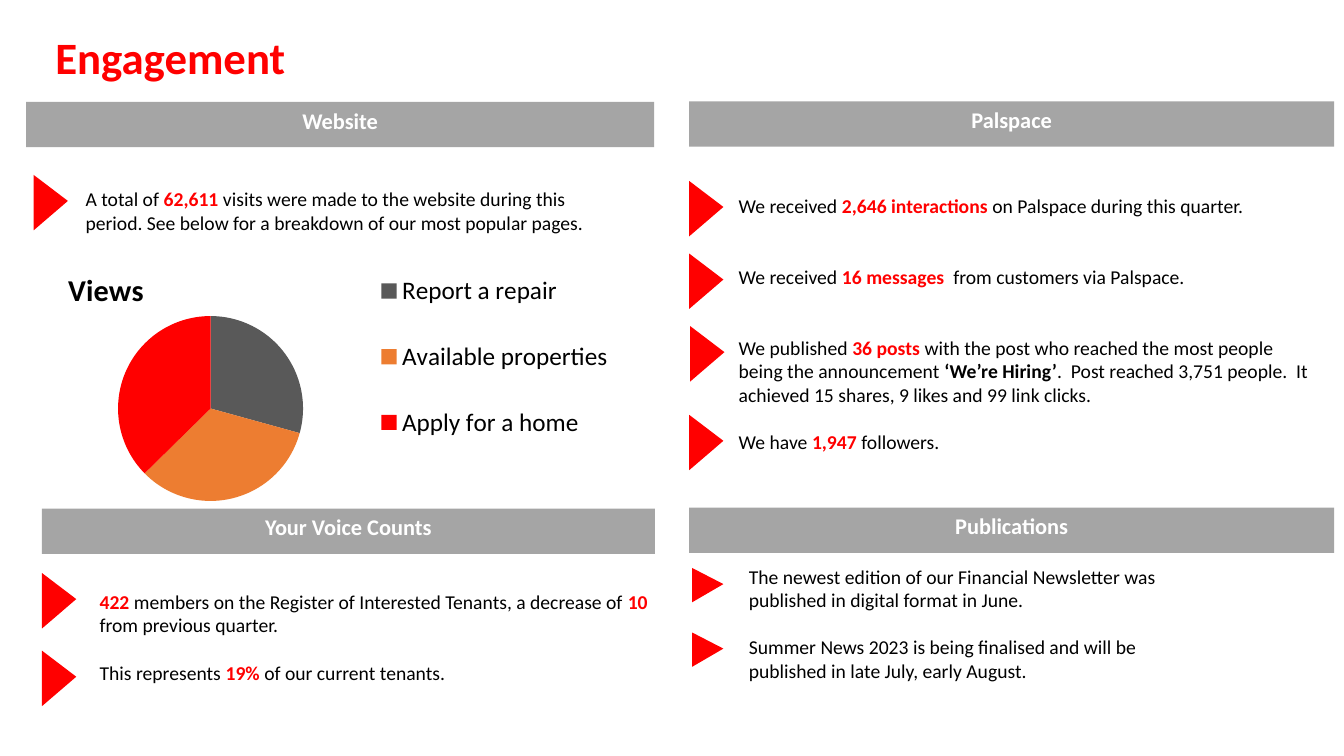
import pptx
import pptx.chart.data
import pptx.dml.color
import pptx.enum.chart
import pptx.enum.shapes
import pptx.enum.text
import pptx.oxml
import pptx.oxml.ns
import pptx.util

COLORS = {"red": "FF0000", "bar": "A5A5A5", "text": "000000", "white": "FFFFFF",
          "repair": "595959", "properties": "ED7D31"}
FONT = "Calibri"
WIDTH, HEIGHT = pptx.util.Inches(13.33), pptx.util.Inches(7.5)
COLUMN, ROW = WIDTH / 40, HEIGHT / 30
BAR_ROWS = 1.8
LARGE_MARKER, SMALL_MARKER = (1.02, 2.2), (0.93, 1.36)
LINE = 17  # points taken by one line of 14 point text

STYLES = {
    "plain": {"size": 14, "color": "text", "bold": False},
    "strong": {"size": 14, "color": "text", "bold": True},
    "key": {"size": 14, "color": "red", "bold": True},
    "heading": {"size": 16, "color": "white", "bold": True},
    "title": {"size": 32, "color": "red", "bold": True},
    "legend": {"size": 18, "color": "text", "bold": False},
    "chart title": {"size": 21.6, "color": "text", "bold": True},
}

# Boxes are (left, top, width, height) in columns and rows; markers and text
# are placed from the top left corner of their region's bar.
REGIONS = [
    {"heading": "Website", "bar": (0.78, 4.04, 18.69, BAR_ROWS),
     "marker": LARGE_MARKER, "markers": [(0.22, 2.9)],
     "text": (1.47, 3.2, 16.38, 3.24),
     "paragraphs": [
         (0, [("A total of ", "plain"), ("62,611", "key"),
              (" visits were made to the website during this period. "
               "See below for a breakdown of our most popular pages.", "plain")])]},
    {"heading": "Palspace", "bar": (20.51, 4.02, 19.2, BAR_ROWS),
     "marker": LARGE_MARKER,
     "markers": [(0, 3.16), (0, 6.04), (0.03, 8.92), (0, 12.44)],
     "text": (1.18, 3.46, 17.91, 10.76),
     "paragraphs": [
         (0, [("We received ", "plain"), ("2,646 interactions ", "key"),
              ("on Palspace during this quarter.", "plain")]),
         (2, [("We received ", "plain"), ("16 messages  ", "key"),
              ("from customers via Palspace.", "plain")]),
         (2, [("We published ", "plain"), ("36 posts ", "key"),
              ("with the post who reached the most people being the announcement ",
               "plain"),
              ("‘We’re Hiring’", "strong"),
              (".  Post reached 3,751 people.  It achieved 15 shares, 9 likes "
               "and 99 link clicks.", "plain")]),
         (1, [("We have ", "plain"), ("1,947", "key"), (" followers.", "plain")])]},
    {"heading": "Your Voice Counts", "bar": (1.25, 20.18, 18.24, BAR_ROWS),
     "marker": LARGE_MARKER, "markers": [(0, 2.56), (0, 5.64)],
     "text": (1.42, 3.02, 17.34, 4.16),
     "paragraphs": [
         (0, [("422", "key"),
              (" members on the Register of Interested Tenants, a decrease of ",
               "plain"),
              ("10 ", "key"), ("from previous quarter.", "plain")]),
         (1, [("This represents ", "plain"), ("19% ", "key"),
              ("of our current tenants.", "plain")])]},
    {"heading": "Publications", "bar": (20.51, 20.14, 19.2, BAR_ROWS),
     "marker": SMALL_MARKER, "markers": [(0.09, 2.4), (0.09, 4.96)],
     "text": (1.48, 2.06, 14.04, 6.04),
     "paragraphs": [
         (0, [("The newest edition of our Financial Newsletter was published "
               "in digital format in June.", "plain")]),
         (1, [("Summer News 2023 is being finalised and will be published in "
               "late July, early August.", "plain")])]},
]
VIEWS = [("Report a repair", 29, "repair"), ("Available properties", 33, "properties"),
         ("Apply for a home", 37, "red")]


def rgb(name):
    return pptx.dml.color.RGBColor.from_string(COLORS[name])


def to_lengths(box):
    left, top, width, height = box
    return [round(value) for value in
            (left * COLUMN, top * ROW, width * COLUMN, height * ROW)]


def style_font(font, style):
    values = STYLES[style]
    formats = {"name": FONT, "size": pptx.util.Pt(values["size"]), "bold": values["bold"]}
    for attribute, value in formats.items():
        setattr(font, attribute, value)
    font.color.rgb = rgb(values["color"])


def add_spans(para, spans):
    for text, style in spans:
        span = para.add_run()
        span.text = text
        style_font(span.font, style)


def add_solid(slide, preset, lengths, color):
    shape = slide.shapes.add_shape(preset, *lengths)
    shape.shadow.inherit = False
    shape.fill.solid()
    shape.fill.fore_color.rgb = rgb(color)
    shape.line.fill.background()
    return shape


def add_text(slide, box, paragraphs):
    """Each paragraph is (lines of space before it, spans)."""
    frame = slide.shapes.add_textbox(*to_lengths(box)).text_frame
    frame.word_wrap = True
    for index, (gap, spans) in enumerate(paragraphs):
        para = frame.add_paragraph() if index else frame.paragraphs[0]
        para.space_before = pptx.util.Pt(gap * LINE)
        add_spans(para, spans)
    return frame


def add_bar(slide, box, heading):
    bar = add_solid(slide, pptx.enum.shapes.MSO_SHAPE.RECTANGLE, to_lengths(box), "bar")
    bar.text_frame.vertical_anchor = pptx.enum.text.MSO_ANCHOR.TOP
    para = bar.text_frame.paragraphs[0]
    para.alignment = pptx.enum.text.PP_ALIGN.CENTER
    add_spans(para, [(heading, "heading")])


def add_marker(slide, box):
    """Fill the box with a triangle that points right."""
    left, top, width, height = to_lengths(box)
    shift = (width - height) // 2
    marker = add_solid(slide, pptx.enum.shapes.MSO_SHAPE.ISOSCELES_TRIANGLE,
                       (left + shift, top - shift, height, width), "red")
    marker.rotation = 90
    marker.adjustments[0] = 0.47


def add_region(slide, region):
    left, top = region["bar"][:2]
    add_bar(slide, region["bar"], region["heading"])
    for across, down in region["markers"]:
        add_marker(slide, (left + across, top + down, *region["marker"]))
    across, down, width, height = region["text"]
    add_text(slide, (left + across, top + down, width, height), region["paragraphs"])


def set_layout(parent, index, shares, inner=False):
    """Place a chart part by shares (x, y, width, height) of the chart."""
    for old in parent.findall(pptx.oxml.ns.qn("c:layout")):
        parent.remove(old)
    target = '<c:layoutTarget val="inner"/>' if inner else ""
    modes = "".join(f'<c:{axis}Mode val="edge"/>' for axis in "xy")
    values = "".join(f'<c:{name} val="{share}"/>' for name, share in zip("xywh", shares))
    parent.insert(index, pptx.oxml.parse_xml(
        f'<c:layout {pptx.oxml.ns.nsdecls("c")}><c:manualLayout>'
        f'{target}{modes}{values}</c:manualLayout></c:layout>'))


def add_views_chart(slide, box):
    data = pptx.chart.data.CategoryChartData()
    data.categories = [page for page, _, _ in VIEWS]
    data.add_series("Views", [count for _, count, _ in VIEWS])
    chart = slide.shapes.add_chart(pptx.enum.chart.XL_CHART_TYPE.PIE,
                                   *to_lengths(box), data).chart
    style_font(chart.font, "legend")
    chart.has_title = True
    add_spans(chart.chart_title.text_frame.paragraphs[0], [("Views", "chart title")])
    chart.has_legend = True
    chart.legend.position = pptx.enum.chart.XL_LEGEND_POSITION.RIGHT
    chart.legend.include_in_layout = False
    style_font(chart.legend.font, "legend")
    plot = chart.plots[0]
    plot.vary_by_categories = True
    for index, (_, _, color) in enumerate(VIEWS):
        fill = plot.series[0].points[index].format.fill
        fill.solid()
        fill.fore_color.rgb = rgb(color)
    parts = chart._chartSpace.find(pptx.oxml.ns.qn("c:chart"))
    set_layout(parts.find(pptx.oxml.ns.qn("c:title")), 1, (0.03, 0.1))
    set_layout(parts.find(pptx.oxml.ns.qn("c:plotArea")), 0, (0.12, 0.29, 0.33, 0.66), True)
    set_layout(parts.find(pptx.oxml.ns.qn("c:legend")), 1, (0.55, 0.02, 0.45, 0.83))


def add_title(slide, box):
    frame = add_text(slide, box, [(0, [("Engagement", "title")])])
    frame.vertical_anchor = pptx.enum.text.MSO_ANCHOR.MIDDLE
    frame.paragraphs[0].line_spacing = 0.9


def main():
    deck = pptx.Presentation()
    deck.slide_width, deck.slide_height = WIDTH, HEIGHT
    slide = deck.slides.add_slide(deck.slide_layouts[6])
    add_title(slide, (1.35, 1.36, 35.25, 2.04))
    for region in REGIONS:
        add_region(slide, region)
    add_views_chart(slide, (1.35, 9.32, 17.25, 11.12))
    deck.save("out.pptx")


if __name__ == "__main__":
    main()
